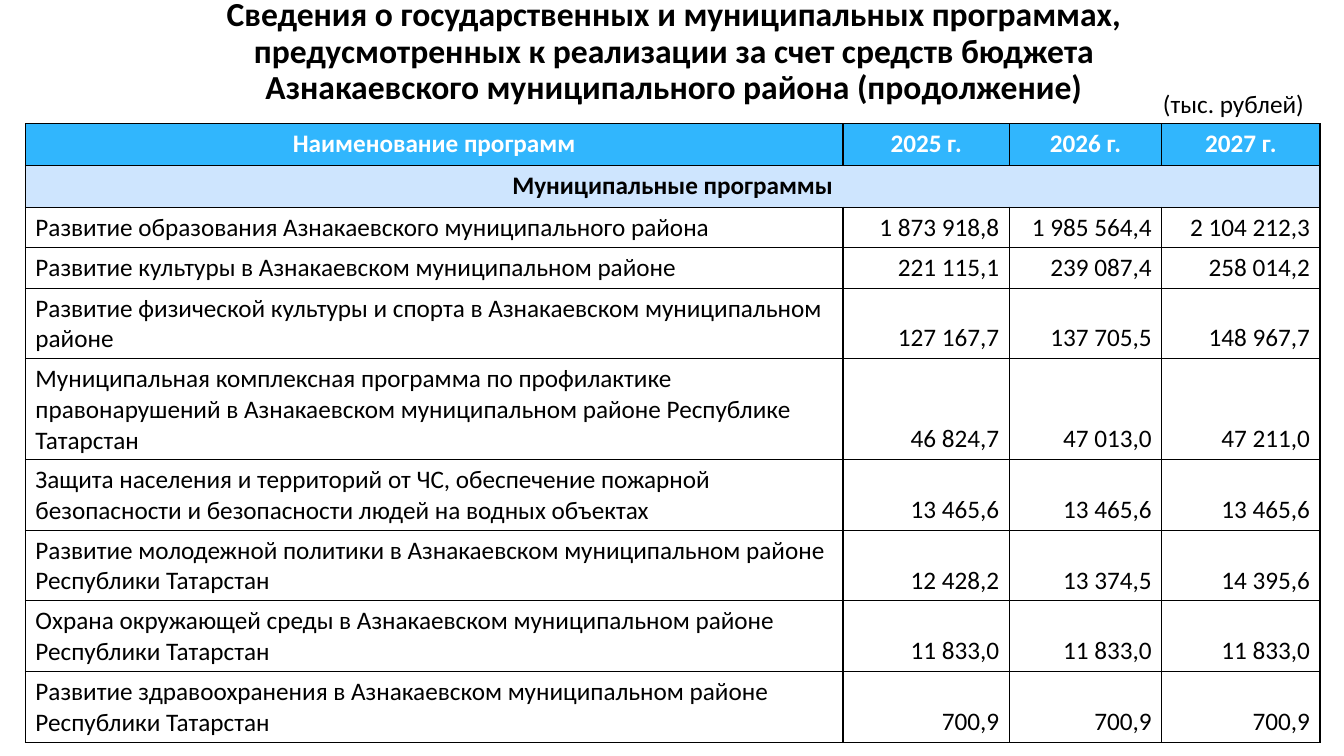
from dataclasses import dataclass

from lxml.etree import SubElement
from pptx import Presentation
from pptx.dml.color import RGBColor
from pptx.enum.text import MSO_ANCHOR, PP_ALIGN
from pptx.oxml.ns import qn
from pptx.util import Cm, Pt


@dataclass(frozen=True)
class Theme:
    font: str = "Calibri"
    title_size: int = 24
    body_size: int = 18
    border_width: int = 1
    text: str = "000000"
    border: str = "000000"
    header_text: str = "FFFFFF"
    header_fill: str = "31B6FD"
    section_fill: str = "CEE5FE"
    body_fill: str = "FFFFFF"


THEME = Theme()
TITLE = (
    "Сведения о государственных и муниципальных программах, "
    "предусмотренных к реализации за счет средств бюджета "
    "Азнакаевского муниципального района (продолжение)"
)
UNIT = "(тыс. рублей)"
HEADERS = ["Наименование программ", "2025 г.", "2026 г.", "2027 г."]
SECTION = "Муниципальные программы"
PROGRAMS = [
    (1, "Развитие образования Азнакаевского муниципального района",
     "1 873 918,8", "1 985 564,4", "2 104 212,3"),
    (1, "Развитие культуры в Азнакаевском муниципальном районе",
     "221 115,1", "239 087,4", "258 014,2"),
    (2, "Развитие физической культуры и спорта в Азнакаевском муниципальном районе",
     "127 167,7", "137 705,5", "148 967,7"),
    (3, "Муниципальная комплексная программа по профилактике правонарушений "
        "в Азнакаевском муниципальном районе Республике Татарстан",
     "46 824,7", "47 013,0", "47 211,0"),
    (2, "Защита населения и территорий от ЧС, обеспечение пожарной безопасности "
        "и безопасности людей на водных объектах",
     "13 465,6", "13 465,6", "13 465,6"),
    (2, "Развитие молодежной политики в Азнакаевском муниципальном районе "
        "Республики Татарстан",
     "12 428,2", "13 374,5", "14 395,6"),
    (2, "Охрана окружающей среды в Азнакаевском муниципальном районе "
        "Республики Татарстан",
     "11 833,0", "11 833,0", "11 833,0"),
    (2, "Развитие здравоохранения в Азнакаевском муниципальном районе "
        "Республики Татарстан",
     "700,9", "700,9", "700,9"),
]
COLUMN_SHARES = [0.6315, 0.1285, 0.1177, 0.1223]
HEADING_ROW_HEIGHT = 1.05
ROW_PADDING = 0.26
LINE_HEIGHT = 0.76


def write_text(text_frame, text, size, color, alignment, bold=False):
    text_frame.text = text
    paragraph = text_frame.paragraphs[0]
    paragraph.alignment = alignment
    font = paragraph.runs[0].font
    font.name = THEME.font
    font.size = Pt(size)
    font.bold = bold
    font.color.rgb = RGBColor.from_string(color)
    return paragraph


def add_title(slide, left, top, width, height):
    shape = slide.shapes.add_textbox(Cm(left), Cm(top), Cm(width), Cm(height))
    shape.text_frame.word_wrap = True
    paragraph = write_text(shape.text_frame, TITLE, THEME.title_size,
                           THEME.text, PP_ALIGN.CENTER, bold=True)
    paragraph.line_spacing = 0.9


def add_unit(slide, left, top, width, height):
    shape = slide.shapes.add_textbox(Cm(left), Cm(top), Cm(width), Cm(height))
    shape.text_frame.word_wrap = False
    write_text(shape.text_frame, UNIT, THEME.body_size, THEME.text, PP_ALIGN.CENTER)


def style_cell(cell, fill, anchor):
    cell.vertical_anchor = anchor
    properties = cell._tc.get_or_add_tcPr()
    for side in ("a:lnL", "a:lnR", "a:lnT", "a:lnB"):
        line = SubElement(properties, qn(side), w=str(Pt(THEME.border_width)))
        solid = SubElement(line, qn("a:solidFill"))
        SubElement(solid, qn("a:srgbClr"), val=THEME.border)
    cell.fill.solid()
    cell.fill.fore_color.rgb = RGBColor.from_string(fill)


def add_program_table(slide, left, top, width):
    heights = [HEADING_ROW_HEIGHT] * 2
    heights += [ROW_PADDING + LINE_HEIGHT * lines for lines, *_ in PROGRAMS]
    table = slide.shapes.add_table(
        len(heights), len(HEADERS), Cm(left), Cm(top), Cm(width), Cm(sum(heights))
    ).table
    for column, share in zip(table.columns, COLUMN_SHARES):
        column.width = Cm(width * share)
    for row, height in zip(table.rows, heights):
        row.height = Cm(height)

    for cell, header in zip(table.rows[0].cells, HEADERS):
        style_cell(cell, THEME.header_fill, MSO_ANCHOR.TOP)
        write_text(cell.text_frame, header, THEME.body_size,
                   THEME.header_text, PP_ALIGN.CENTER, bold=True)

    for cell in table.rows[1].cells:
        style_cell(cell, THEME.section_fill, MSO_ANCHOR.TOP)
    section = table.cell(1, 0)
    section.merge(table.cell(1, len(HEADERS) - 1))
    write_text(section.text_frame, SECTION, THEME.body_size,
               THEME.text, PP_ALIGN.CENTER, bold=True)

    for row_index, (_, *values) in enumerate(PROGRAMS, start=2):
        for column_index, value in enumerate(values):
            cell = table.cell(row_index, column_index)
            style_cell(cell, THEME.body_fill, MSO_ANCHOR.BOTTOM)
            alignment = PP_ALIGN.RIGHT if column_index else PP_ALIGN.LEFT
            write_text(cell.text_frame, value, THEME.body_size, THEME.text, alignment)


def build_program_slide(presentation):
    slide = presentation.slides.add_slide(presentation.slide_layouts[6])
    add_unit(slide, 29.03, 2.11, 4.11, 1.03)
    add_title(slide, 3.84, -0.18, 26.29, 3.02)
    add_program_table(slide, 0.64, 3.12, 32.63)


def main():
    presentation = Presentation()
    presentation.slide_width = Cm(33.87)
    presentation.slide_height = Cm(19.05)
    build_program_slide(presentation)
    presentation.save("out.pptx")


if __name__ == "__main__":
    main()
